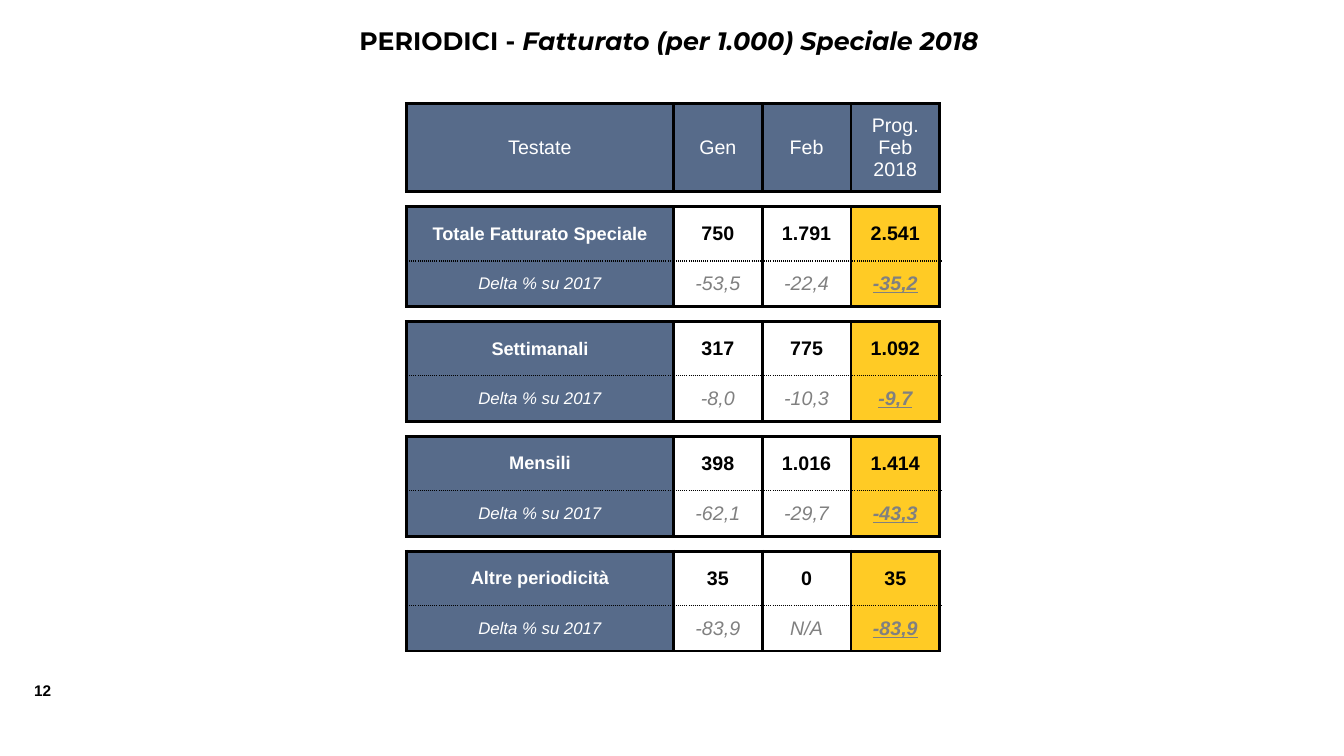
from dataclasses import dataclass
from typing import Optional

from lxml.etree import SubElement as Sub
from pptx import Presentation
from pptx.dml.color import RGBColor as RGB
from pptx.enum.text import MSO_ANCHOR as Anchor, PP_ALIGN as Align
from pptx.oxml.ns import qn
from pptx.util import Pt

UNIT = 9144


@dataclass(frozen=True)
class Theme:
    body: str = "Arial"
    head: str = "Montserrat"
    ink: str = "000000"
    white: str = "FFFFFF"
    blue: str = "576B8A"
    gold: str = "FFCB25"
    gray: str = "808080"
    title: int = 18
    value: int = 14
    name: int = 13
    delta: int = 12
    page: int = 11
    gap: int = 4


@dataclass(frozen=True)
class Look:
    size: int
    color: str
    bold: bool = False
    slant: bool = False
    under: bool = False
    face: str = Theme.body


@dataclass(frozen=True)
class Edge:
    width: int
    dash: str = "solid"


@dataclass(frozen=True)
class Group:
    name: str
    sums: tuple[str, ...]
    deltas: tuple[str, ...]


THEME = Theme()
THICK = Edge(28575)
DOTS = Edge(12700, "sysDot")
COLS = (265, 88, 88, 88)
HEAD, GAP, SUM, DELTA = 87, 15, 54, 45
TITLES = ("Testate", "Gen", "Feb", "Prog.\vFeb\v2018")
GROUPS = (
    Group("Totale Fatturato Speciale", ("750", "1.791", "2.541"), ("-53,5", "-22,4", "-35,2")),
    Group("Settimanali", ("317", "775", "1.092"), ("-8,0", "-10,3", "-9,7")),
    Group("Mensili", ("398", "1.016", "1.414"), ("-62,1", "-29,7", "-43,3")),
    Group("Altre periodicità", ("35", "0", "35"), ("-83,9", "N/A", "-83,9")),
)


def px(n: int) -> int:
    return n * UNIT


def style(para, look: Look) -> None:
    font = para.font
    font.name = look.face
    font.size = Pt(look.size)
    font.bold = look.bold
    font.italic = look.slant
    font.underline = look.under
    font.color.rgb = RGB.from_string(look.color)


def border(cell, side: str, edge: Optional[Edge]) -> None:
    line = Sub(cell._tc.get_or_add_tcPr(), qn(f"a:ln{side}"))
    if edge is None:
        Sub(line, qn("a:noFill"))
        return
    line.set("w", str(edge.width))
    fill = Sub(line, qn("a:solidFill"))
    Sub(fill, qn("a:srgbClr")).set("val", THEME.ink)
    Sub(line, qn("a:prstDash")).set("val", edge.dash)


def paint(cell, fill: str, sides: Optional[Edge], top: Edge, low: Edge) -> None:
    for side, edge in zip("LRTB", (sides, sides, top, low)):
        border(cell, side, edge)
    cell.fill.solid()
    cell.fill.fore_color.rgb = RGB.from_string(fill)
    cell.vertical_anchor = Anchor.MIDDLE


def pad(cell, wide: int, high: int) -> None:
    cell.margin_left = cell.margin_right = px(wide)
    cell.margin_top = cell.margin_bottom = px(high)


def write(cell, text: str, look: Look) -> None:
    para = cell.text_frame.paragraphs[0]
    para.text = text
    para.alignment = Align.CENTER
    style(para, look)


def space(row) -> None:
    row.height = px(GAP)
    for cell in row.cells:
        paint(cell, THEME.white, None, THICK, THICK)
        pad(cell, 0, 0)
        para = cell.text_frame.paragraphs[0]
        para._p.get_or_add_endParaRPr().set("sz", str(THEME.gap * 100))


def header(row) -> None:
    row.height = px(HEAD)
    for cell, text in zip(row.cells, TITLES):
        paint(cell, THEME.blue, THICK, THICK, THICK)
        pad(cell, 10, 5)
        write(cell, text, Look(THEME.value, THEME.white))


def band(row, high: int, texts: tuple[str, ...], looks: tuple[Look, ...],
         top: Edge, low: Edge) -> None:
    row.height = px(high)
    fills = (THEME.blue, THEME.white, THEME.white, THEME.gold)
    for i, cell in enumerate(row.cells):
        paint(cell, fills[i], THICK, top, low)
        pad(cell, 0 if i else 10, 0 if i else 5)
        write(cell, texts[i], looks[i])


def grid(slide) -> None:
    tall = HEAD + len(GROUPS) * (GAP + SUM + DELTA)
    count = 1 + 3 * len(GROUPS)
    table = slide.shapes.add_table(
        count, len(COLS), px(403), px(103), px(sum(COLS)), px(tall)).table
    table.first_row = table.horz_banding = False
    for col, wide in zip(table.columns, COLS):
        col.width = px(wide)
    value = Look(THEME.value, THEME.ink, bold=True)
    name = Look(THEME.name, THEME.white, bold=True)
    delta = Look(THEME.value, THEME.gray, slant=True)
    label = Look(THEME.delta, THEME.white, slant=True)
    final = Look(THEME.value, THEME.gray, bold=True, slant=True, under=True)
    rows = iter(table.rows)
    header(next(rows))
    for group in GROUPS:
        space(next(rows))
        band(next(rows), SUM, (group.name, *group.sums),
             (name, value, value, value), THICK, DOTS)
        band(next(rows), DELTA, ("Delta % su 2017", *group.deltas),
             (label, delta, delta, final), DOTS, THICK)


def title(slide) -> None:
    frame = slide.shapes.add_textbox(px(191), px(20), px(945), px(40)).text_frame
    frame.word_wrap = True
    para = frame.paragraphs[0]
    para.alignment = Align.CENTER
    para.add_run().text = "PERIODICI - "
    tail = para.add_run()
    tail.text = "Fatturato (per 1.000) Speciale 2018"
    tail.font.italic = True
    style(para, Look(THEME.title, THEME.ink, bold=True, face=THEME.head))


def number(slide) -> None:
    frame = slide.shapes.add_textbox(px(24), px(671), px(42), px(29)).text_frame
    frame.word_wrap = False
    para = frame.paragraphs[0]
    para.text = "12"
    para.alignment = Align.LEFT
    style(para, Look(THEME.page, THEME.ink, bold=True))


def main() -> None:
    deck = Presentation()
    deck.slide_width, deck.slide_height = px(1333), px(750)
    slide = deck.slides.add_slide(deck.slide_layouts[6])
    number(slide)
    title(slide)
    grid(slide)
    deck.save("out.pptx")


if __name__ == "__main__":
    main()
